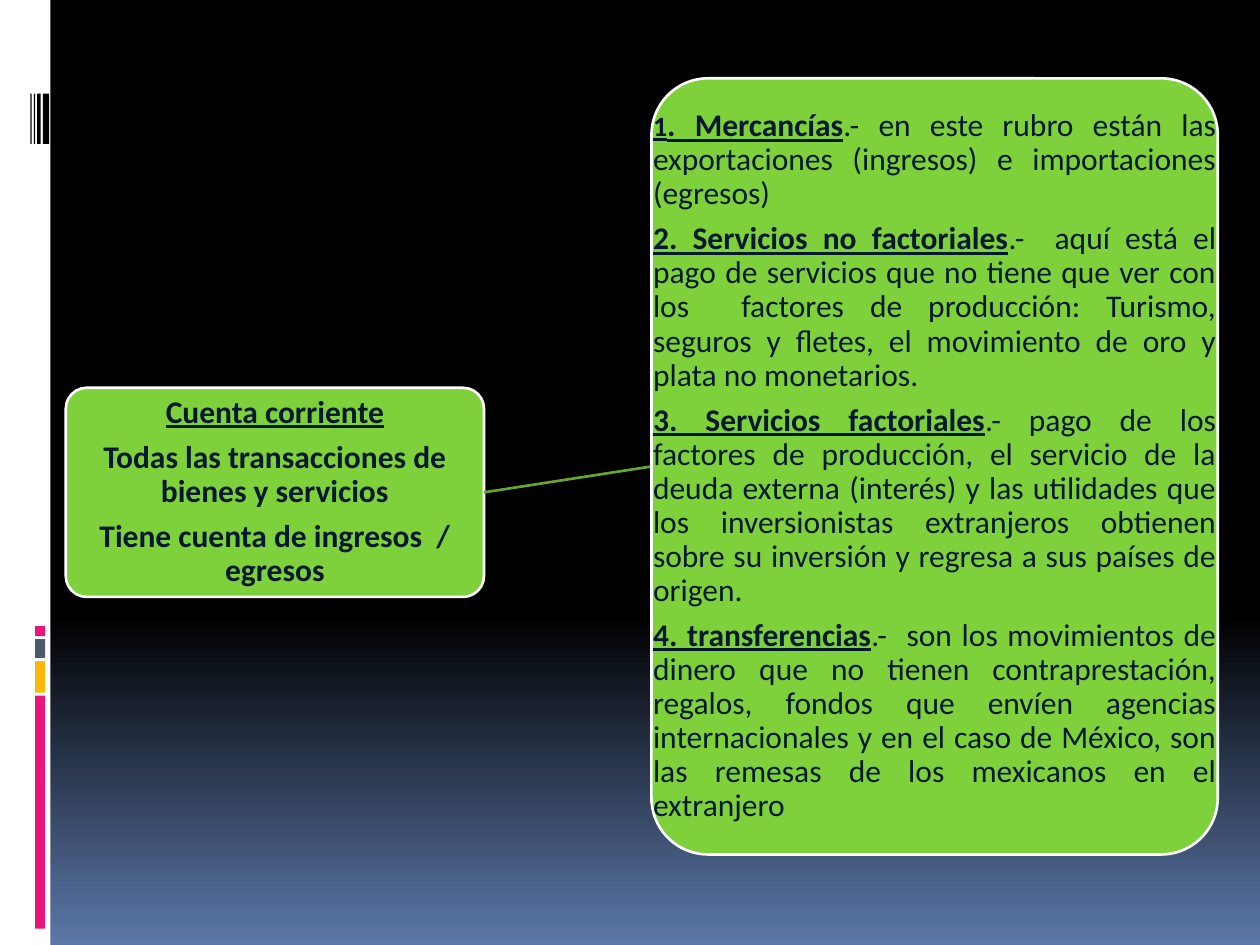
"""Build the slide on the current account and its four components."""
from dataclasses import dataclass

from lxml import etree
from pptx import Presentation
from pptx.dml.color import RGBColor
from pptx.enum.shapes import MSO_CONNECTOR, MSO_SHAPE
from pptx.enum.text import MSO_ANCHOR, PP_ALIGN
from pptx.oxml.ns import qn
from pptx.util import Pt

RECT, ROUND = MSO_SHAPE.RECTANGLE, MSO_SHAPE.ROUNDED_RECTANGLE
STRAIGHT = MSO_CONNECTOR.STRAIGHT
MIDDLE = MSO_ANCHOR.MIDDLE
CENTER, JUSTIFY = PP_ALIGN.CENTER, PP_ALIGN.JUSTIFY


@dataclass(frozen=True)
class Theme:
    font: str = "Calibri"
    body: float = 18
    small: float = 16
    line: float = 1.5
    ink: str = "00192F"
    green: str = "7FD13B"
    link: str = "66A72F"
    white: str = "FFFFFF"
    black: str = "000000"
    pink: str = "EA157A"
    amber: str = "FEB80A"
    slate: str = "4E5B6F"
    blue: str = "5B77A8"


@dataclass(frozen=True)
class Box:
    left: float
    top: float
    width: float
    height: float

    def emu(self) -> tuple:
        return Pt(self.left), Pt(self.top), Pt(self.width), Pt(self.height)


@dataclass(frozen=True)
class Bar:
    box: Box
    color: str


@dataclass(frozen=True)
class Span:
    text: str
    bold: bool = False
    underline: bool = False
    size: float = Theme.body


T = Theme()


def heading(text: str, size: float = T.body) -> Span:
    return Span(text, bold=True, underline=True, size=size)


BARS = [
    Bar(Box(0, 0, 28.8, 540), T.white),
    Bar(Box(20.1, 397.5, 5.7, 133.2), T.pink),
    Bar(Box(20.1, 377.8, 5.7, 18), T.amber),
    Bar(Box(20.1, 365.2, 5.7, 10.8), T.slate),
    Bar(Box(20.1, 357.8, 5.7, 5.7), T.pink),
    Bar(Box(24.5, 53.5, 3.6, 28.8), T.black),
    Bar(Box(21.2, 53.5, 2, 28.8), T.black),
    Bar(Box(19.4, 53.5, 0.8, 28.8), T.black),
    Bar(Box(17.4, 53.5, 0.7, 28.8), T.black),
]

ACCOUNT = Box(37.6, 221.6, 239, 119.5)
DETAIL = Box(372.3, 44.8, 323.6, 443.5)

ACCOUNT_TEXT = [
    [heading("Cuenta corriente")],
    [Span("Todas las transacciones de bienes y servicios", bold=True)],
    [Span("Tiene cuenta de ingresos  / egresos", bold=True)],
]

DETAIL_TEXT = [
    [heading("1", T.small), heading(". Mercancías"),
     Span(".- en este rubro están las exportaciones (ingresos) e "
          "importaciones (egresos)")],
    [heading("2. Servicios no factoriales"),
     Span(".-  aquí está el pago de servicios que no tiene que ver con los  "
          "factores de producción: Turismo, seguros y fletes, el movimiento "
          "de oro y plata no monetarios.")],
    [heading("3. Servicios factoriales"),
     Span(".- pago de los factores de producción, el servicio de la deuda "
          "externa (interés) y las utilidades que los inversionistas "
          "extranjeros obtienen sobre su inversión y regresa a sus países "
          "de origen.")],
    [heading("4. transferencias"),
     Span(".-  son los movimientos de dinero que no tienen contraprestación, "
          "regalos, fondos que envíen agencias internacionales y en el caso "
          "de México, son las remesas de los mexicanos en el extranjero")],
]


def rgb(color: str) -> RGBColor:
    return RGBColor.from_string(color)


def paint_background(s) -> None:
    fill = s.background.fill
    fill.gradient()
    fill.gradient_angle = 270
    for stop, position, color in zip(fill.gradient_stops, (0.65, 1), (T.black, T.blue)):
        stop.position = position
        stop.color.rgb = rgb(color)


def add_block(s, kind, box: Box, color: str, outline: str | None = None):
    sp = s.shapes.add_shape(kind, *box.emu())
    sp.shadow.inherit = False
    sp.fill.solid()
    sp.fill.fore_color.rgb = rgb(color)
    if outline:
        sp.line.color.rgb = rgb(outline)
        sp.line.width = Pt(T.line)
    else:
        sp.line.fill.background()
    return sp


def add_run(p, text: str, *, size: float, bold: bool, underline: bool) -> None:
    r = p.add_run()
    r.text = text
    r.font.name = T.font
    r.font.size = Pt(size)
    r.font.bold = bold
    r.font.underline = underline
    r.font.color.rgb = rgb(T.ink)


def add_text(s, box: Box, paragraphs: list[list[Span]], align) -> None:
    tf = s.shapes.add_textbox(*box.emu()).text_frame
    tf.word_wrap = True
    tf.vertical_anchor = MIDDLE
    tf.margin_left = tf.margin_right = tf.margin_top = tf.margin_bottom = Pt(0.9)
    for i, spans in enumerate(paragraphs):
        p = tf.add_paragraph() if i else tf.paragraphs[0]
        p.alignment = align
        p.line_spacing = 0.9
        p.space_after = Pt(0.35 * T.body)
        for span in spans:
            add_run(p, span.text, size=span.size, bold=span.bold,
                    underline=span.underline)


def add_card(s, box: Box, paragraphs: list[list[Span]], align) -> None:
    sp = add_block(s, ROUND, box, T.green, T.white)
    sp.adjustments[0] = 0.1
    add_text(s, box, paragraphs, align)


def add_link(s, start: Box, end: Box) -> None:
    sp = s.shapes.add_connector(
        STRAIGHT,
        Pt(start.left + start.width), Pt(start.top + start.height / 2),
        Pt(end.left), Pt(end.top + end.height / 2))
    sp.line.color.rgb = rgb(T.link)
    sp.line.width = Pt(T.line)
    etree.SubElement(sp._element.spPr, qn("a:effectLst"))


def main() -> None:
    prs = Presentation()
    prs.slide_width, prs.slide_height = Pt(720), Pt(540)
    s = prs.slides.add_slide(prs.slide_layouts[6])
    paint_background(s)
    for bar in BARS:
        add_block(s, RECT, bar.box, bar.color)
    add_card(s, ACCOUNT, ACCOUNT_TEXT, CENTER)
    add_link(s, ACCOUNT, DETAIL)
    add_card(s, DETAIL, DETAIL_TEXT, JUSTIFY)
    prs.save("out.pptx")


if __name__ == "__main__":
    main()
